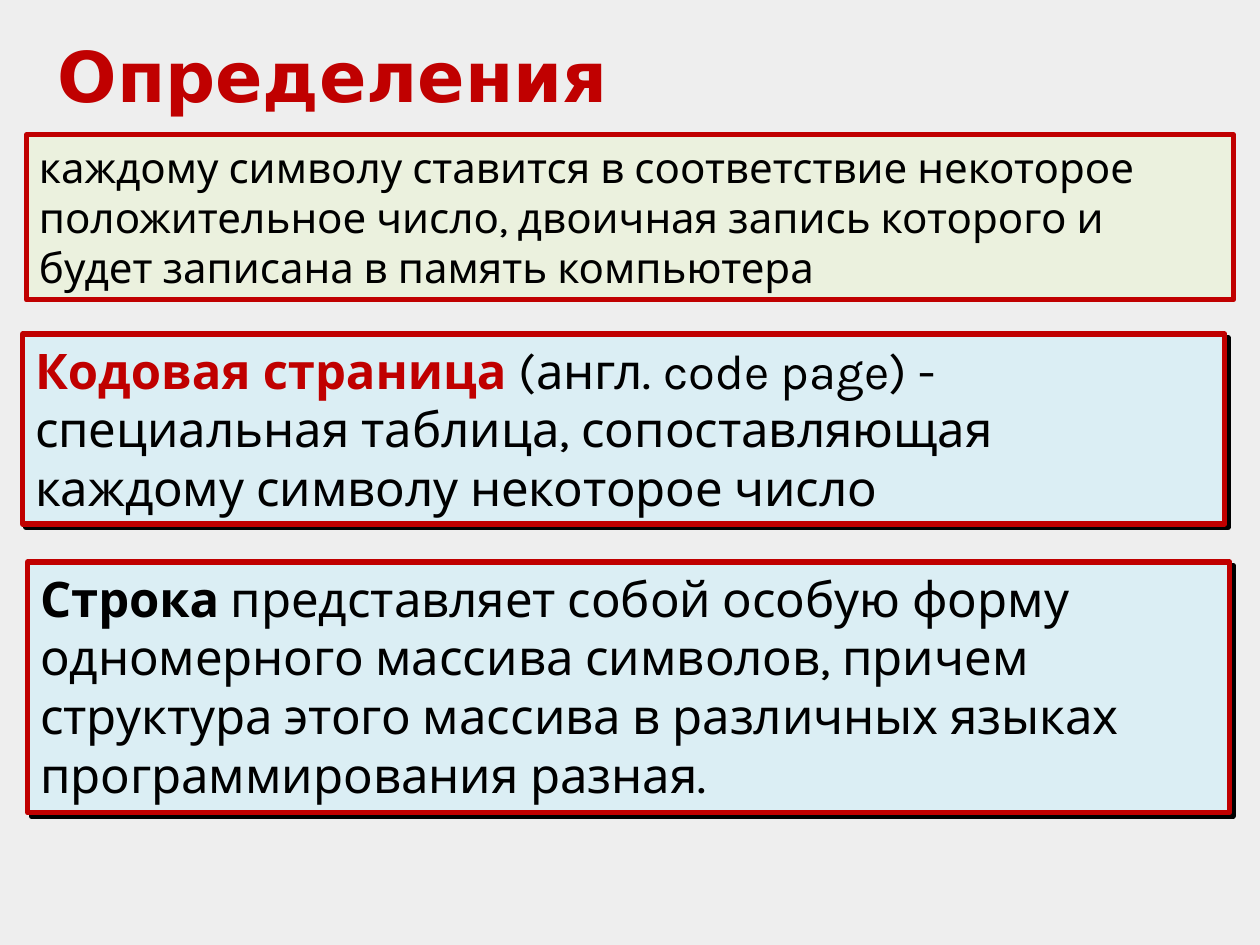
"""Build the slide with definitions of code page and string."""
import lxml.etree
import pptx
import pptx.dml.color
import pptx.enum.shapes
import pptx.enum.text
import pptx.oxml.ns
import pptx.util

Inches = pptx.util.Inches
RGBColor = pptx.dml.color.RGBColor
RED = RGBColor(0xC0, 0x00, 0x00)
BLACK = RGBColor(0x00, 0x00, 0x00)
GREEN = RGBColor(0xEB, 0xF1, 0xDE)
BLUE = RGBColor(0xDB, 0xEE, 0xF4)
GREY = RGBColor(0xEE, 0xEE, 0xEE)


def write_spans(shape, spans, font, size):
    frame = shape.text_frame
    frame.word_wrap = True
    frame.vertical_anchor = pptx.enum.text.MSO_ANCHOR.TOP
    para = frame.paragraphs[0]
    para.alignment = pptx.enum.text.PP_ALIGN.LEFT
    for text, color, bold in spans:
        span = para.add_run()
        span.text = text
        span.font.name = font
        span.font.size = pptx.util.Pt(size)
        span.font.bold = bold
        span.font.color.rgb = color


def add_shadow(shape):
    qn = pptx.oxml.ns.qn
    effects = shape._element.spPr.find(qn("a:effectLst"))
    shadow = lxml.etree.SubElement(
        effects, qn("a:outerShdw"), dist=str(pptx.util.Pt(2.8)), dir="2700000", algn="ctr", rotWithShape="0"
    )
    lxml.etree.SubElement(shadow, qn("a:srgbClr"), val=str(BLACK))


deck = pptx.Presentation()
deck.slide_width = Inches(10)
deck.slide_height = Inches(7.5)
page = deck.slides.add_slide(deck.slide_layouts[6])
page.background.fill.solid()
page.background.fill.fore_color.rgb = GREY

title = page.shapes.add_textbox(Inches(0.36), Inches(0.21), Inches(9.28), Inches(0.77))
write_spans(title, [("Определения", RED, True)], "DejaVu Sans", 40)

definitions = [
    (0.21, 1.07, 9.58, 1.31, GREEN, 24, False, [
        ("каждому символу ставится в соответствие некоторое положительное число, "
         "двоичная запись которого и будет записана в память компьютера", BLACK, False),
    ]),
    (0.18, 2.65, 9.54, 1.51, BLUE, 28, True, [
        ("Кодовая страница ", RED, True),
        ("(англ. code page) - специальная таблица, сопоставляющая "
         "каждому символу некоторое число", BLACK, False),
    ]),
    (0.22, 4.46, 9.54, 1.99, BLUE, 28, True, [
        ("Строка", BLACK, True),
        (" представляет собой особую форму одномерного массива символов, причем "
         "структура этого массива в различных языках программирования разная.", BLACK, False),
    ]),
]
for left, top, width, height, fill, size, shadowed, spans in definitions:
    box = page.shapes.add_shape(
        pptx.enum.shapes.MSO_SHAPE.RECTANGLE, Inches(left), Inches(top), Inches(width), Inches(height)
    )
    box.fill.solid()
    box.fill.fore_color.rgb = fill
    box.line.color.rgb = RED
    box.line.width = pptx.util.Pt(3)
    box.shadow.inherit = False
    if shadowed:
        add_shadow(box)
    write_spans(box, spans, "Karla", size)

deck.save("out.pptx")
